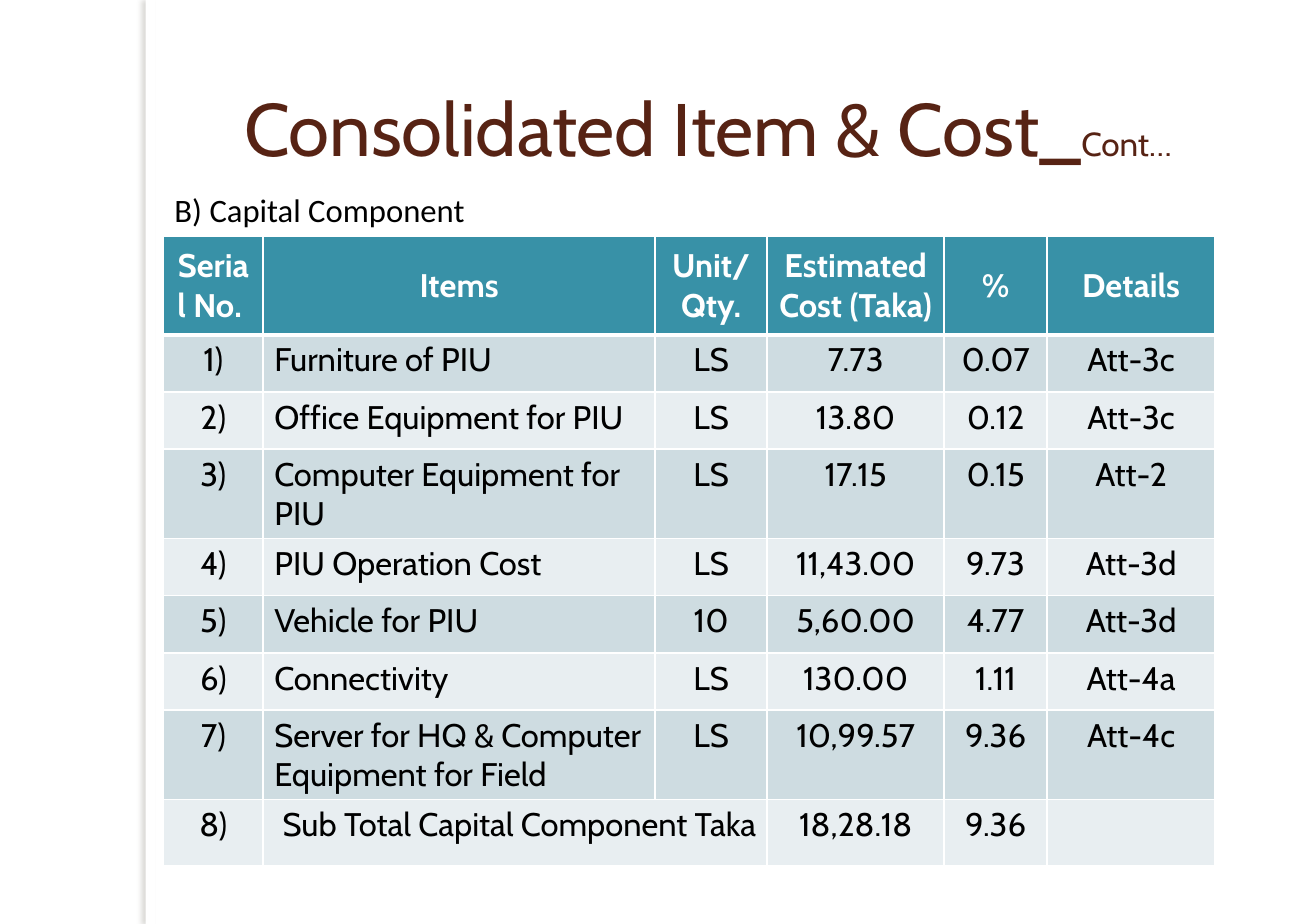
from lxml import etree
from pptx import Presentation
from pptx.dml.color import RGBColor
from pptx.enum.shapes import MSO_SHAPE
from pptx.enum.text import MSO_ANCHOR, PP_ALIGN
from pptx.util import Inches, Pt

LEFT, MID, RIGHT = PP_ALIGN.LEFT, PP_ALIGN.CENTER, PP_ALIGN.RIGHT
TOP, CENTER = MSO_ANCHOR.TOP, MSO_ANCHOR.MIDDLE
RECT = MSO_SHAPE.RECTANGLE
NS = "http://schemas.openxmlformats.org/drawingml/2006/main"


def color(text):
    return RGBColor.from_string(text)


def style(font, look, tint):
    for key, value in look.items():
        setattr(font, key, value)
    font.color.rgb = color(tint)


deck = Presentation()
deck.slide_width, deck.slide_height = Inches(11.75), Inches(8.25)
slide = deck.slides.add_slide(deck.slide_layouts[6])

# White side strip with a soft shadow to its left
strip = slide.shapes.add_shape(RECT, Inches(1.3), 0, Inches(0.09), Inches(8.25))
strip.shadow.inherit = False
strip.fill.solid()
strip.fill.fore_color.rgb = color("FFFFFF")
strip.line.fill.background()
glow = strip._element.spPr.find(f"{{{NS}}}effectLst")
glow.append(etree.fromstring(
    f'<a:outerShdw xmlns:a="{NS}" blurRad="{Pt(3)}" dist="{Pt(3)}" '
    'dir="10800000" algn="tl" rotWithShape="0"><a:srgbClr val="736F63">'
    '<a:alpha val="25000"/></a:srgbClr></a:outerShdw>'))

# Title and subtitle: box, anchor, alignment, runs (text, size), font, colour
texts = [
    ((1.71, 0.62, 9.22, 1.02), CENTER, MID,
     [("Consolidated Item & Cost_", 47.8), ("Cont…", 21.4)], "Cabin", "572314"),
    ((1.46, 1.65, 3.33, 0.45), TOP, LEFT,
     [("B) Capital Component", 21)], "Calibri", "000000"),
]
for box, anchor, align, runs, face, tint in texts:
    frame = slide.shapes.add_textbox(*map(Inches, box)).text_frame
    frame.word_wrap = True
    frame.vertical_anchor = anchor
    para = frame.paragraphs[0]
    para.alignment = align
    for words, size in runs:
        run = para.add_run()
        run.text = words
        style(run.font, {"name": face, "size": Pt(size)}, tint)

# Cost table
rows = [
    ("Serial No. ", "Items", "Unit/\nQty.", "Estimated Cost (Taka)", "%", "Details"),
    ("1)", "Furniture of PIU", "LS", "7.73", "0.07", "Att-3c"),
    ("2)", "Office Equipment for PIU", "LS", "13.80", "0.12", "Att-3c"),
    ("3)", "Computer Equipment for PIU", "LS", "17.15", "0.15", "Att-2"),
    ("4)", "PIU Operation Cost", "LS", "11,43.00", "9.73", "Att-3d"),
    ("5)", "Vehicle for PIU", "10", "5,60.00", "4.77", "Att-3d"),
    ("6)", "Connectivity", "LS", "130.00", "1.11", "Att-4a"),
    ("7)", "Server for HQ & Computer Equipment for Field", "LS", "10,99.57",
     "9.36", "Att-4c"),
    ("8)", "Sub Total Capital Component Taka", "", "18,28.18", "9.36", ""),
]
widths = [0.89, 3.5, 1, 1.58, 0.92, 1.5]
heights = [0.88] + [0.51] * 6 + [0.74, 0.59]
last = len(rows) - 1
table = slide.shapes.add_table(
    len(rows), len(widths), Inches(1.46), Inches(2.11),
    Inches(sum(widths)), Inches(sum(heights))).table
for col, width in zip(table.columns, widths):
    col.width = Inches(width)
for row, height in zip(table.rows, heights):
    row.height = Inches(height)
table.cell(last, 1).merge(table.cell(last, 2))

for r, row in enumerate(rows):
    head = r == 0
    fill = "3891A7" if head else ("E8EEF1", "CEDCE1")[r % 2]
    for c, words in enumerate(row):
        cell = table.cell(r, c)
        cell.fill.solid()
        cell.fill.fore_color.rgb = color(fill)
        cell.vertical_anchor = CENTER if head else TOP

        # White borders, heavier under the header
        edges = {"lnL": 1, "lnR": 1, "lnT": 3 if r == 1 else 1, "lnB": 3 if head else 1}
        props = cell._tc.get_or_add_tcPr()
        for spot, (edge, weight) in enumerate(edges.items()):
            props.insert(spot, etree.fromstring(
                f'<a:{edge} xmlns:a="{NS}" w="{Pt(weight)}"><a:solidFill>'
                f'<a:srgbClr val="FFFFFF"/></a:solidFill></a:{edge}>'))

        if not words:
            continue
        cell.text = words
        align = MID if head or c != 1 else RIGHT if r == last else LEFT
        for para in cell.text_frame.paragraphs:
            para.alignment = align
            style(para.runs[0].font, {"name": "Cabin", "size": Pt(21), "bold": head},
                  "FFFFFF" if head else "000000")

deck.save("out.pptx")
